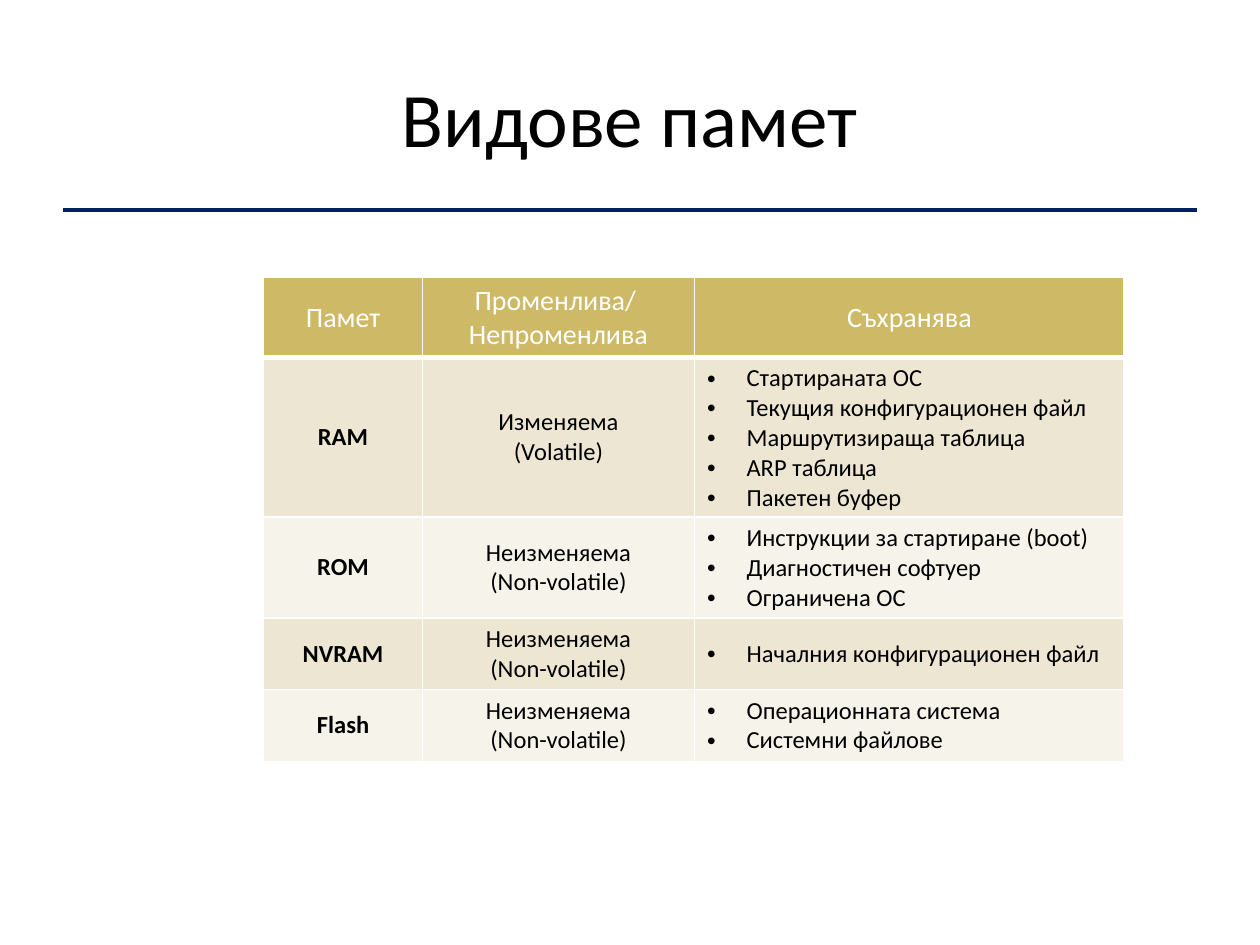
from lxml import etree
from pptx import Presentation
from pptx import util as u
from pptx.dml import color
from pptx.enum import shapes, text
from pptx.oxml import ns

COLORS = {"ink": "000000", "paper": "FFFFFF", "navy": "002060",
          "gold": "CEB966", "sand": "EDE6D3", "cream": "F6F3EA"}
HEADER = ["Памет", "Променлива/ \nНепроменлива", "Съхранява"]
FIXED = "Неизменяема\n(Non-volatile)"
MEMORIES = [
    ["RAM", "Изменяема\n(Volatile)",
     "Стартираната ОС\nТекущия конфигурационен файл\nМаршрутизираща таблица\n"
     "ARP таблица\nПакетен буфер"],
    ["ROM", FIXED, "Инструкции за стартиране (boot)\nДиагностичен софтуер\nОграничена ОС"],
    ["NVRAM", FIXED, "Началния конфигурационен файл"],
    ["Flash", FIXED, "Операционната система\nСистемни файлове"],
]
COLUMN_WIDTHS = [90.72, 155.52, 245.52]
ROW_HEIGHTS = [45.36, 74.16, 57.6, 29.52, 41.04]


def rgb(name):
    """Look up a named colour."""
    return color.RGBColor.from_string(COLORS[name])


def add_child(parent, tag, **attributes):
    """Append a DrawingML element to its parent."""
    return etree.SubElement(parent, ns.qn(tag), attributes)


def add_bullet(para, indent=22.5):
    """Give a paragraph a round bullet with a hanging indent."""
    properties = para._p.get_or_add_pPr()
    properties.set("marL", str(u.Pt(indent)))
    properties.set("indent", str(-u.Pt(indent)))
    add_child(properties, "a:buFont", typeface="Arial")
    add_child(properties, "a:buChar", char="•")


def write_text(frame, content, size=14, ink="ink", bold=False, bullets=False, font="Calibri"):
    """Fill a text frame with one paragraph for each line of content."""
    for index, line in enumerate(content.split("\n")):
        para = frame.add_paragraph() if index else frame.paragraphs[0]
        para.alignment = text.PP_ALIGN.LEFT if bullets else text.PP_ALIGN.CENTER
        if bullets:
            add_bullet(para)
        span = para.add_run()
        span.text = line
        span.font.name, span.font.size, span.font.bold = font, u.Pt(size), bold
        span.font.color.rgb = rgb(ink)


def add_borders(cell, bottom=1):
    """Draw white borders round a table cell."""
    properties = cell._tc.get_or_add_tcPr()
    widths = {"a:lnL": 1, "a:lnR": 1, "a:lnT": 1, "a:lnB": bottom}
    for index, (tag, width) in enumerate(widths.items()):
        line = add_child(properties, tag, w=str(u.Pt(width)))
        properties.insert(index, line)
        add_child(add_child(line, "a:solidFill"), "a:srgbClr", val=COLORS["paper"])


class SlideBuilder:
    """Hold the font and the current page, and add elements to it."""

    def __init__(self, page, font="Calibri"):
        self.page, self.font = page, font

    def rule(self, left, right, top):
        """Add a horizontal line."""
        line = self.page.shapes.add_connector(
            shapes.MSO_CONNECTOR.STRAIGHT, u.Pt(left), u.Pt(top), u.Pt(right), u.Pt(top))
        line.line.color.rgb, line.line.width = rgb("navy"), u.Pt(2.25)
        add_child(line._element.spPr, "a:effectLst")

    def title(self, content, left, top, width, height):
        """Add the centred heading."""
        box = self.page.shapes.add_textbox(u.Pt(left), u.Pt(top), u.Pt(width), u.Pt(height))
        box.text_frame.word_wrap = True
        box.text_frame.vertical_anchor = text.MSO_ANCHOR.MIDDLE
        write_text(box.text_frame, content, size=44, font=self.font)

    def table(self, rows, left, top, height):
        """Add the table with a gold header and banded rows."""
        frame = self.page.shapes.add_table(
            len(rows), len(COLUMN_WIDTHS), u.Pt(left), u.Pt(top),
            u.Pt(sum(COLUMN_WIDTHS)), u.Pt(height))
        for column, width in zip(frame.table.columns, COLUMN_WIDTHS):
            column.width = u.Pt(width)
        for row, row_height in zip(frame.table.rows, ROW_HEIGHTS):
            row.height = u.Pt(row_height)
        frame.height = u.Pt(height)
        for r, row in enumerate(rows):
            for c, content in enumerate(row):
                self.cell(frame.table.cell(r, c), content, r, c)

    def cell(self, cell, content, row, column):
        """Style and fill one table cell."""
        header = row == 0
        band = "sand" if row % 2 else "cream"
        cell.vertical_anchor = text.MSO_ANCHOR.MIDDLE
        cell.fill.solid()
        cell.fill.fore_color.rgb = rgb("gold" if header else band)
        add_borders(cell, bottom=3 if header else 1)
        write_text(cell.text_frame, content, size=16 if header else 14,
                   ink="paper" if header else "ink", font=self.font,
                   bold=not header and column == 0, bullets=not header and column == 2)


def main():
    """Build the memory types slide."""
    deck = Presentation()
    deck.slide_width, deck.slide_height = u.Pt(720), u.Pt(540)
    builder = SlideBuilder(deck.slides.add_slide(deck.slide_layouts[6]))
    builder.rule(36, 684, 120)
    builder.title("Видове памет", 36, 21.6, 648, 90)
    builder.table([HEADER] + MEMORIES, 150.7, 158.6, 275.8)
    deck.save("out.pptx")


if __name__ == "__main__":
    main()
